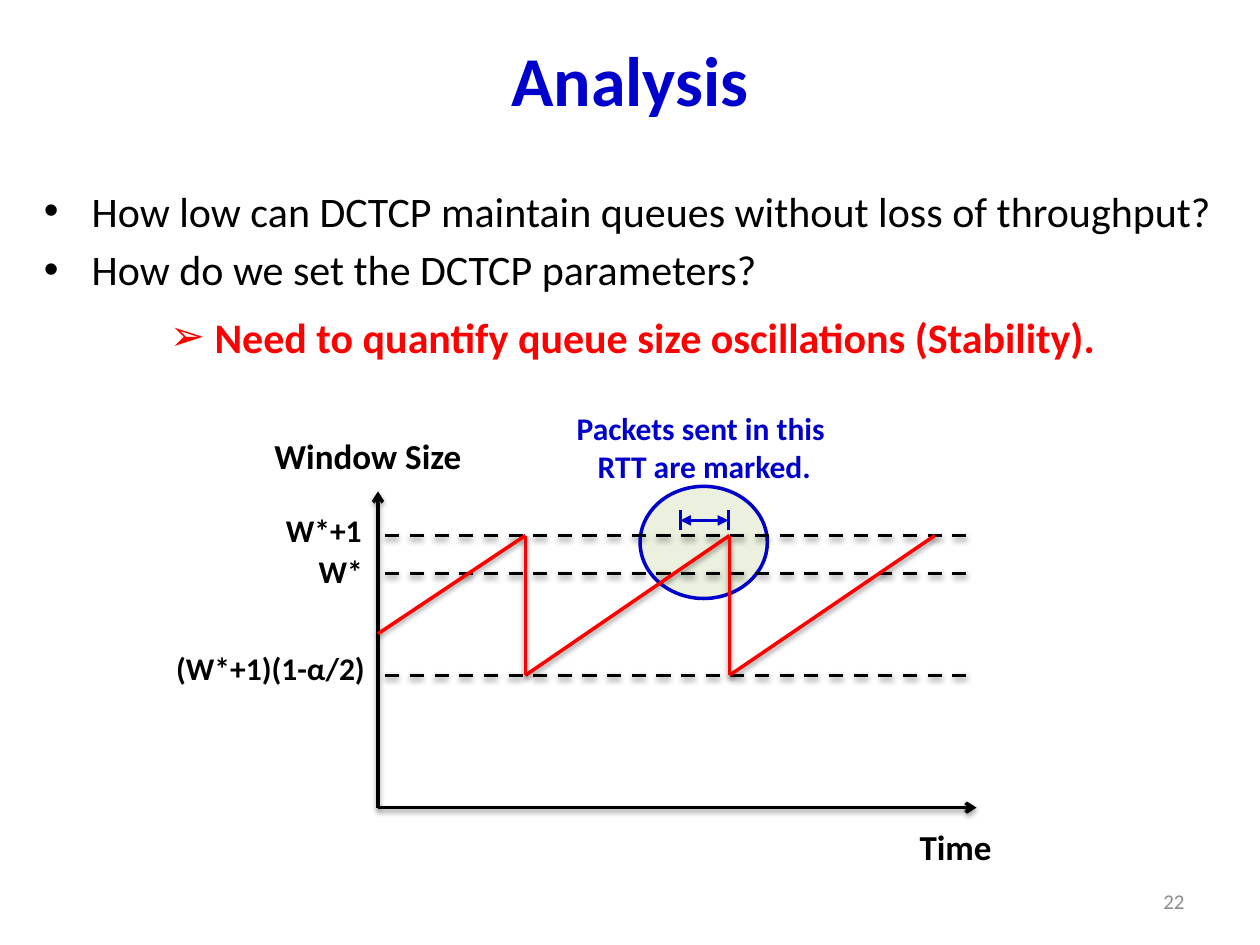
from lxml.etree import SubElement
from pptx import Presentation
from pptx.dml.color import RGBColor
from pptx.enum.dml import MSO_LINE
from pptx.enum.shapes import MSO_CONNECTOR, MSO_SHAPE
from pptx.enum.text import MSO_ANCHOR, PP_ALIGN
from pptx.oxml.ns import qn
from pptx.util import Inches, Pt

BLUE, RED, BLACK, GRAY, PALE = "0000CC", "FF0000", "000000", "8C8C8C", "EBF1DE"
FONT = "Calibri"

# The slide is a grid of 100 columns by 75 rows of square cells
COLUMNS, ROWS, CELL = 100, 75, 0.1

# Rows and columns of the plot
ORIGIN, BASE = 30, 64.1
PEAK, TARGET, VALLEY = 42.5, 45.5, 53.6
DROPS = (41.7, 57.9)
PLOT_END = 76.7


def cells(count):
    return Inches(count * CELL)


def color(hex_value):
    return RGBColor.from_string(hex_value)


def add_bullet(para, mark, hanging=0):
    properties = para._p.get_or_add_pPr()
    properties.set("marL", str(cells(hanging)))
    properties.set("indent", str(-cells(hanging)))
    SubElement(properties, qn("a:buFont"), typeface="Arial")
    SubElement(properties, qn("a:buChar"), char=mark)


def add_text(page, place, lines, size, ink=BLACK, bold=True,
             align=PP_ALIGN.LEFT, anchor=MSO_ANCHOR.TOP,
             bullet=None, hanging=0, before=0):
    box = page.shapes.add_textbox(*map(cells, place))
    frame = box.text_frame
    frame.word_wrap = True
    frame.vertical_anchor = anchor
    for index, line in enumerate(lines):
        para = frame.add_paragraph() if index else frame.paragraphs[0]
        para.alignment = align
        para.space_before = Pt(before)
        if bullet:
            add_bullet(para, bullet, hanging)
        span = para.add_run()
        span.text = line
        span.font.name = FONT
        span.font.size = Pt(size)
        span.font.bold = bold
        span.font.color.rgb = color(ink)


def add_line(page, start, end, ink, dashed=False, head=None, tail=None, shadow=True):
    line = page.shapes.add_connector(
        MSO_CONNECTOR.STRAIGHT, *map(cells, (*start, *end)))
    line.line.color.rgb = color(ink)
    line.line.width = Pt(2)
    if dashed:
        line.line.dash_style = MSO_LINE.DASH
    outline = line.line._get_or_add_ln()
    for tag, kind in (("a:headEnd", head), ("a:tailEnd", tail)):
        if kind:
            SubElement(outline, qn(tag), type=kind)
    effects = SubElement(line._element.spPr, qn("a:effectLst"))
    if shadow:
        outer = SubElement(effects, qn("a:outerShdw"), blurRad=str(Pt(3.1)),
                           dist=str(Pt(1.6)), dir="5400000", rotWithShape="0")
        tone = SubElement(outer, qn("a:srgbClr"), val=BLACK)
        SubElement(tone, qn("a:alpha"), val="38000")


def add_marked_round(page):
    circle = page.shapes.add_shape(
        MSO_SHAPE.OVAL, *map(cells, (50.8, 38.6, 10.1, 8.9)))
    circle.shadow.inherit = False
    circle.fill.solid()
    circle.fill.fore_color.rgb = color(PALE)
    circle.line.color.rgb = color(BLUE)
    circle.line.width = Pt(2)
    add_text(page, (43.3, 32, 25.2, 7.1),
             ["Packets sent in this ", "RTT are marked."], 18, BLUE,
             align=PP_ALIGN.CENTER)
    # Span of one round trip between two end marks
    left, right = 54, 57.8
    for column in (left, right):
        add_line(page, (column, 42.1), (column, 40.5), BLUE, shadow=False)
    add_line(page, (left, 41.3), (right, 41.3), BLUE,
             head="triangle", tail="triangle", shadow=False)


def add_headings(page):
    add_text(page, (5, 0, 90, 12.5), ["Analysis"], 40, BLUE,
             align=PP_ALIGN.CENTER, anchor=MSO_ANCHOR.MIDDLE)
    add_text(page, (2.5, 14.2, 95, 16.7),
             ["How low can DCTCP maintain queues without loss of throughput?",
              "How do we set the DCTCP parameters?"],
             24, bold=False, bullet="•", hanging=3.8, before=4.8)
    add_text(page, (12.5, 24.2, 76.7, 5),
             [" Need to quantify queue size oscillations (Stability)."],
             24, RED, bullet="➢")
    add_text(page, (71.7, 69.5, 23.3, 4), ["22"], 12, GRAY, bold=False,
             align=PP_ALIGN.RIGHT, anchor=MSO_ANCHOR.MIDDLE)


def add_plot(page):
    # Axes
    for end in ((ORIGIN, 39), (77.5, BASE)):
        add_line(page, (ORIGIN, BASE), end, BLACK, tail="arrow")
    # Window levels
    for row in (PEAK, TARGET, VALLEY):
        add_line(page, (PLOT_END, row), (ORIGIN, row), BLACK, dashed=True)
    # Sawtooth: rises from each valley, drops at each peak
    starts = ((ORIGIN, 50.3), *((column, VALLEY) for column in DROPS))
    for start, peak_column in zip(starts, (*DROPS, 74.2)):
        add_line(page, start, (peak_column, PEAK), RED)
    for column in DROPS:
        add_line(page, (column, VALLEY), (column, PEAK), RED)
    # Labels
    for place, label, size in (
        ((20.8, 34, 20.2, 4.4), "Window Size", 20),
        ((72, 65, 16.3, 4.4), "Time", 20),
        ((21.7, 40.1, 18.6, 4), "W*+1", 18),
        ((24.3, 43.3, 8.2, 4), "W*", 18),
        ((13, 51, 18.6, 4), "(W*+1)(1-α/2)", 18),
    ):
        add_text(page, place, [label], size)


def main():
    deck = Presentation()
    deck.slide_width, deck.slide_height = cells(COLUMNS), cells(ROWS)
    page = deck.slides.add_slide(deck.slide_layouts[6])
    add_marked_round(page)
    add_headings(page)
    add_plot(page)
    deck.save("out.pptx")


if __name__ == "__main__":
    main()
